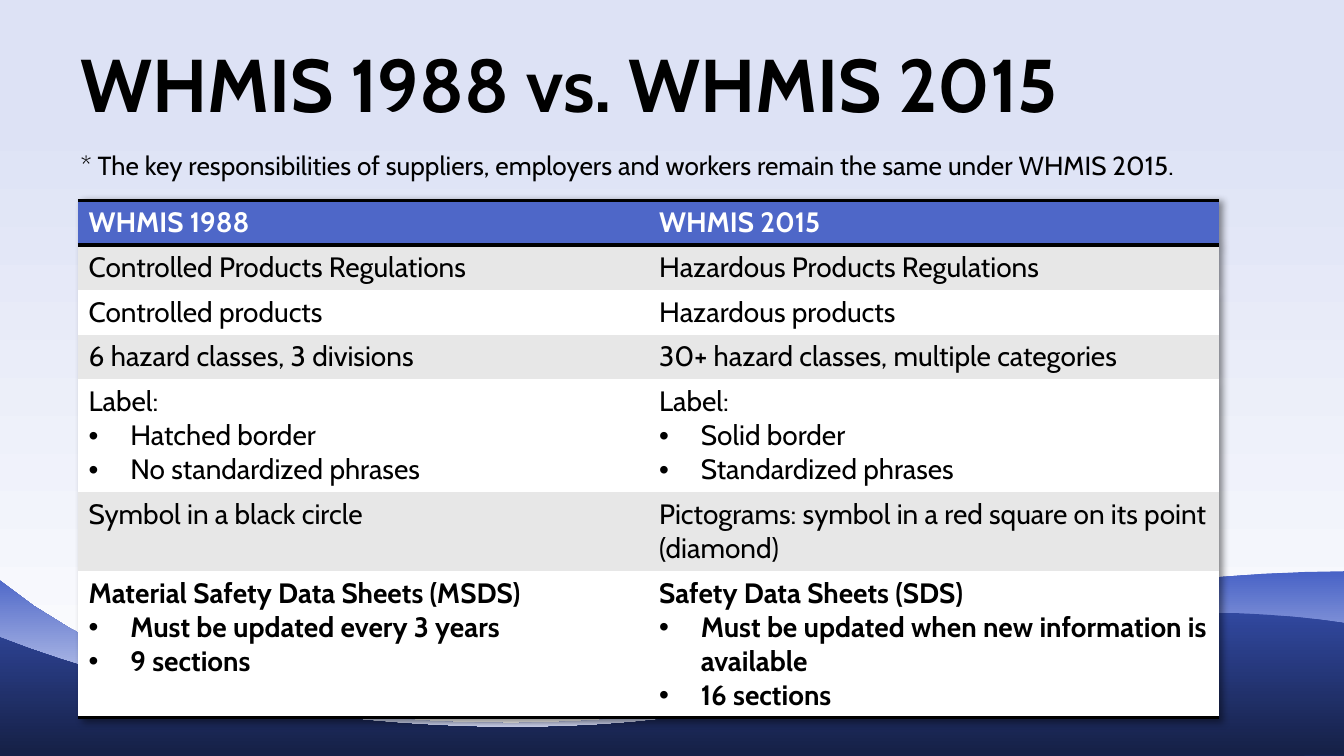
from lxml import etree
from pptx import Presentation
from pptx.dml.color import RGBColor
from pptx.enum.text import MSO_ANCHOR, PP_ALIGN
from pptx.oxml.ns import qn
from pptx.util import Inches, Pt

BOTTOM, TOP = MSO_ANCHOR.BOTTOM, MSO_ANCHOR.TOP
LEFT = PP_ALIGN.LEFT

FONT = "Cabin"
BLACK = RGBColor(0x00, 0x00, 0x00)
WHITE = RGBColor(0xFF, 0xFF, 0xFF)
PALE = RGBColor(0xDD, 0xE2, 0xF5)
GREY = RGBColor(0xE7, 0xE7, 0xE7)
HEADER_BLUE = RGBColor(0x4E, 0x67, 0xC8)
WAVE_BLUE = RGBColor(0x48, 0x62, 0xC6)
WAVE_PALE = RGBColor(0xCC, 0xD3, 0xEF)
DEEP_BLUE = RGBColor(0x31, 0x48, 0x9F)
NAVY = RGBColor(0x16, 0x21, 0x48)
NO_STYLE = "{2D5ABB26-0587-4C30-8999-92F81FD0307C}"

TITLE = "WHMIS 1988 vs. WHMIS 2015"
NOTE = ("* The key responsibilities of suppliers, employers and workers "
        "remain the same under WHMIS 2015.")

# Each row: height, then one list per column; lines after the first are bullets.
ROWS = [
    (0.33, ["WHMIS 1988"], ["WHMIS 2015"]),
    (0.33, ["Controlled Products Regulations"], ["Hazardous Products Regulations"]),
    (0.33, ["Controlled products"], ["Hazardous products"]),
    (0.33, ["6 hazard classes, 3 divisions"], ["30+ hazard classes, multiple categories"]),
    (0.81, ["Label:", "Hatched border", "No standardized phrases"],
     ["Label:", "Solid border", "Standardized phrases"]),
    (0.57, ["Symbol in a black circle"],
     ["Pictograms: symbol in a red square on its point (diamond)"]),
    (1.05, ["Material Safety Data Sheets (MSDS)", "Must be updated every 3 years",
            "9 sections"],
     ["Safety Data Sheets (SDS)", "Must be updated when new information is available",
      "16 sections"]),
]

# Each wave: corner points, then Bezier segments, then gradient stops.
WAVES = [
    ([(10.02, 4.25), (10.01, 5.62), (0, 5.63), (0, 4.32)],
     [((1.95, 5.92), (5.54, 5.26), (5.89, 5.17)),
      ((6.14, 5.1), (7.37, 4.27), (10.02, 4.25))],
     [(0, WAVE_BLUE), (0.71, WAVE_PALE)]),
    ([(10.02, 4.64), (10.02, 5.62), (0, 5.63), (-0.01, 4.74)],
     [((1.82, 5.46), (4.27, 5.58), (5.72, 5.21)),
      ((6.68, 4.97), (7.79, 4.55), (9.12, 4.56)),
      ((9.41, 4.57), (9.71, 4.59), (10.02, 4.64))],
     [(0, DEEP_BLUE), (0.96, NAVY)]),
]
CURVE_STEPS = 24


def set_gradient(fill, stops, angle):
    fill.gradient()
    fill.gradient_angle = angle
    for stop, (position, color) in zip(fill.gradient_stops, stops):
        stop.position = position
        stop.color.rgb = color


def curve_points(start, control1, control2, end):
    for step in range(1, CURVE_STEPS + 1):
        t = step / CURVE_STEPS
        weights = ((1 - t) ** 3, 3 * t * (1 - t) ** 2, 3 * t ** 2 * (1 - t), t ** 3)
        points = (start, control1, control2, end)
        yield tuple(sum(w * p[axis] for w, p in zip(weights, points)) for axis in (0, 1))


def add_wave(slide, corners, curves, stops):
    outline = list(corners)
    for curve in curves:
        outline.extend(curve_points(outline[-1], *curve))
    outline = [(Inches(x), Inches(y)) for x, y in outline]
    builder = slide.shapes.build_freeform(*outline[0])
    builder.add_line_segments(outline[1:], close=True)
    wave = builder.convert_to_shape()
    wave.shadow.inherit = False
    wave.line.fill.background()
    set_gradient(wave.fill, stops, 270)
    slide.shapes.title.element.addprevious(wave.element)


def set_bullet(paragraph, char=None, indent=0):
    properties = paragraph._p.get_or_add_pPr()
    properties.set("marL", str(Inches(indent)))
    properties.set("indent", str(-Inches(indent)))
    if char:
        etree.SubElement(properties, qn("a:buFont"), typeface="Arial")
        etree.SubElement(properties, qn("a:buChar"), char=char)
    else:
        etree.SubElement(properties, qn("a:buNone"))


def format_font(paragraph, size, color, bold):
    for run in paragraph.runs:
        run.font.name = FONT
        run.font.size = Pt(size)
        run.font.color.rgb = color
        run.font.bold = bold


def fill_placeholder(placeholder, text, box, size, bold, anchor):
    placeholder.left, placeholder.top, placeholder.width, placeholder.height = map(Inches, box)
    frame = placeholder.text_frame
    frame.text = text
    frame.word_wrap = True
    frame.vertical_anchor = anchor
    paragraph = frame.paragraphs[0]
    set_bullet(paragraph)
    paragraph.alignment = LEFT
    paragraph.space_before = Pt(0)
    format_font(paragraph, size, BLACK, bold)


def add_borders(cell, sides):
    properties = cell._tc.get_or_add_tcPr()
    for position, side in enumerate(sides):
        line = etree.Element(qn(f"a:ln{side}"), w=str(Pt(2)))
        solid = etree.SubElement(line, qn("a:solidFill"))
        etree.SubElement(solid, qn("a:srgbClr"), val=str(BLACK))
        properties.insert(position, line)


def fill_cell(cell, lines, fill, color, bold, borders):
    cell.margin_left = cell.margin_right = Inches(0.08)
    cell.margin_top = cell.margin_bottom = Inches(0.04)
    cell.fill.solid()
    cell.fill.fore_color.rgb = fill
    cell.text_frame.text = "\n".join(lines)
    for index, paragraph in enumerate(cell.text_frame.paragraphs):
        if index:
            set_bullet(paragraph, "•", 0.31)
        format_font(paragraph, 15, color, bold)
    add_borders(cell, borders)


def add_comparison(slide):
    frame = slide.shapes.add_table(len(ROWS), 2, Inches(0.58), Inches(1.49),
                                   Inches(8.49), Inches(3.84))
    table = frame.table
    table.horz_banding = False
    properties = table._tbl.tblPr
    properties.find(qn("a:tableStyleId")).text = NO_STYLE
    effects = etree.Element(qn("a:effectLst"))
    shadow = etree.SubElement(effects, qn("a:outerShdw"), blurRad=str(Pt(4)),
                              dist=str(Pt(3)), dir="1800000", rotWithShape="0")
    shade = etree.SubElement(shadow, qn("a:srgbClr"), val=str(BLACK))
    etree.SubElement(shade, qn("a:alpha"), val="45000")
    properties.insert(0, effects)

    last = len(ROWS) - 1
    for r, (height, *columns) in enumerate(ROWS):
        table.rows[r].height = Inches(height)
        fill = HEADER_BLUE if r == 0 else GREY if r % 2 else WHITE
        borders = {0: "TB", last: "B"}.get(r, "")
        for c, lines in enumerate(columns):
            fill_cell(table.cell(r, c), lines, fill, BLACK if r else WHITE,
                      r in (0, last), borders)
    frame.height = Inches(3.84)


def main():
    deck = Presentation()
    deck.slide_width = Inches(10)
    deck.slide_height = deck.slide_width * 9 // 16
    slide = deck.slides.add_slide(deck.slide_layouts[1])
    set_gradient(slide.background.fill, [(0, WHITE), (0.85, PALE)], 90)
    for wave in WAVES:
        add_wave(slide, *wave)
    fill_placeholder(slide.shapes.title, TITLE, (0.5, 0.23, 9, 0.77), 40, True, BOTTOM)
    fill_placeholder(slide.placeholders[1], NOTE, (0.5, 1.06, 9, 4), 14, False, TOP)
    add_comparison(slide)
    deck.save("out.pptx")


if __name__ == "__main__":
    main()
